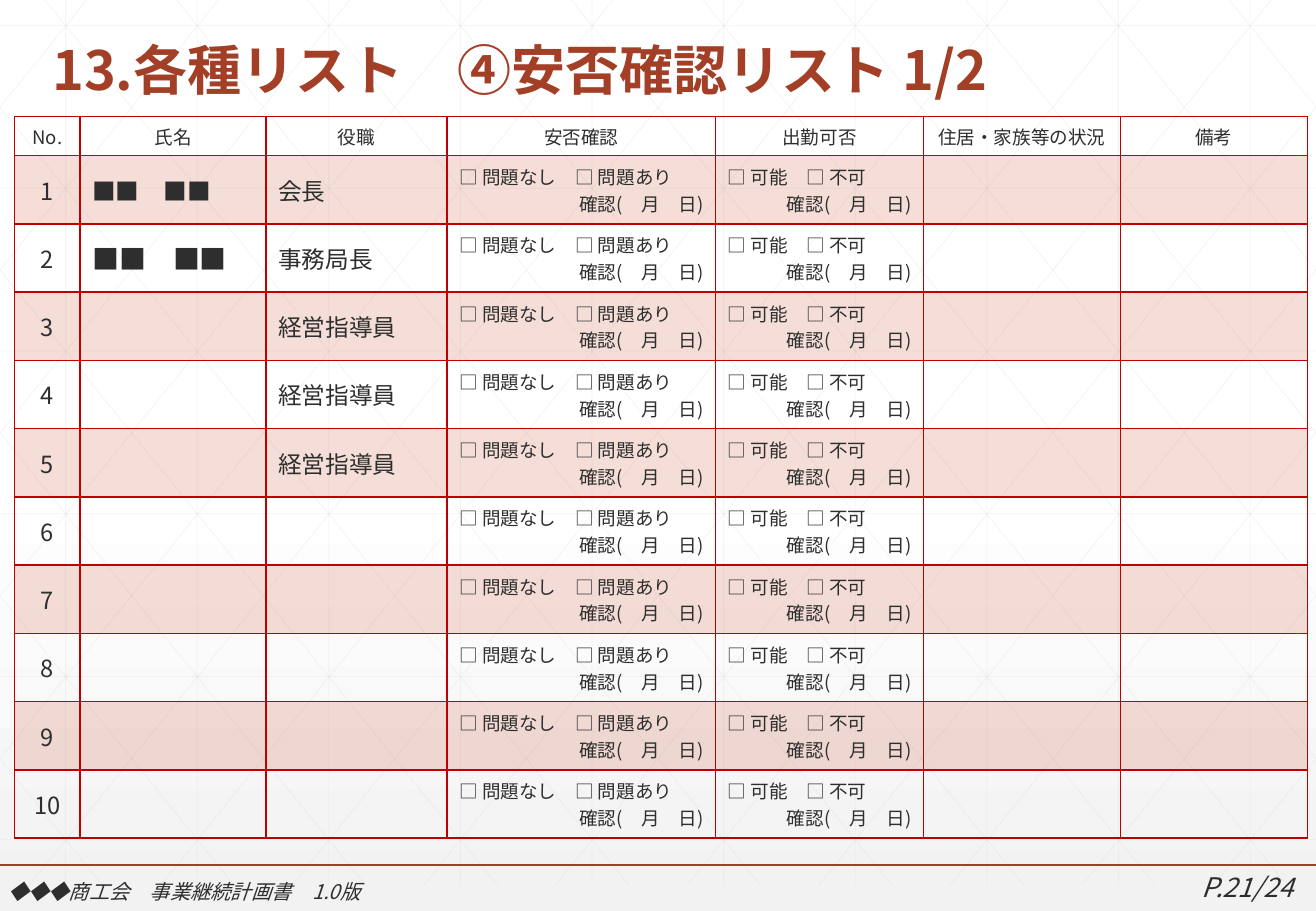
from dataclasses import dataclass

from lxml import etree
from pptx import Presentation
from pptx.dml.color import RGBColor
from pptx.enum.lang import MSO_LANGUAGE_ID
from pptx.enum.shapes import MSO_CONNECTOR
from pptx.enum.text import MSO_ANCHOR, MSO_AUTO_SIZE, PP_ALIGN
from pptx.oxml.ns import qn
from pptx.util import Inches, Pt

LEFT, CENTER, RIGHT = PP_ALIGN.LEFT, PP_ALIGN.CENTER, PP_ALIGN.RIGHT
MIDDLE, BOTTOM = MSO_ANCHOR.MIDDLE, MSO_ANCHOR.BOTTOM
STRAIGHT = MSO_CONNECTOR.STRAIGHT
NO_AUTOFIT = MSO_AUTO_SIZE.NONE
JAPANESE = MSO_LANGUAGE_ID.JAPANESE

FONT = "Noto Sans CJK JP"
COLORS = {
    "text": "2D2E2D",
    "accent": "A43F27",
    "border": "C00000",
    "band": "D15A3E",
    "grid": "D9D9D9",
    "white": "FFFFFF",
    "gray": "F2F2F2",
}
WIDTH, HEIGHT = 10.83, 7.5
GRID_TOP, GRID_BOTTOM = -0.21, 7.29
GRID_STEP, GRID_ROW_STEP = 1.083, 1.34
DIAGONAL_RUN = 6.06

HEADERS = ["No.", "氏名", "役職", "安否確認", "出勤可否", "住居・家族等の状況", "備考"]
COLUMN_WIDTHS = [0.54, 1.53, 1.49, 2.21, 1.71, 1.62, 1.54]
HEADER_HEIGHT, ROW_HEIGHT = 0.32, 0.562
ROW_COUNT = 10
SAFETY = "□ 問題なし　□ 問題あり"
ATTENDANCE = "□ 可能　□ 不可"
CONFIRMED = "確認(　月　日)"


@dataclass
class Member:
    name: str = ""
    role: str = ""
    name_size: float = 14


@dataclass
class Line:
    x1: float
    y1: float
    x2: float
    y2: float
    color: str = "grid"
    width: float = 0.5
    opacity: int = 25


@dataclass
class FooterBox:
    text: str
    left: float
    top: float
    width: float
    height: float
    size: float
    align: PP_ALIGN


MEMBERS = [
    Member("■■　■■", "会長"),
    Member("■■　■■", "事務局長", 16),
    *[Member(role="経営指導員") for _ in range(3)],
    *[Member() for _ in range(ROW_COUNT - 5)],
]
FOOTERS = [
    FooterBox("P.21/24", 9.17, 7.12, 1.57, 0.37, 16, RIGHT),
    FooterBox("◆◆◆商工会　事業継続計画書	1.0版", -0.03, 7.19, 5.27, 0.3, 12, LEFT),
]


def rgb(name: str) -> RGBColor:
    return RGBColor.from_string(COLORS[name])


def write(para, text: str, *, size: float = 11, color: str = "text",
          align: PP_ALIGN = LEFT, bold: bool = False, italic: bool = False) -> None:
    para.alignment = align
    span = para.add_run()
    span.text = text
    font = span.font
    font.size, font.bold, font.italic = Pt(size), bold, italic
    font.color.rgb = rgb(color)
    font.name = FONT
    font.language_id = JAPANESE
    etree.SubElement(span._r.get_or_add_rPr(), qn("a:ea"), typeface=FONT)


def set_opacity(element, percent: int) -> None:
    for color in element.iter(qn("a:srgbClr")):
        etree.SubElement(color, qn("a:alpha"), val=str(percent * 1000))


def draw_line(slide, line: Line) -> None:
    connector = slide.shapes.add_connector(
        STRAIGHT, Inches(line.x1), Inches(line.y1), Inches(line.x2), Inches(line.y2))
    connector.line.color.rgb = rgb(line.color)
    connector.line.width = Pt(line.width)
    properties = connector._element.spPr
    if line.opacity < 100:
        set_opacity(properties, line.opacity)
    etree.SubElement(properties, qn("a:effectLst"))


def grid_lines() -> list[Line]:
    lines = []
    for index in range(10):
        x = 0.54 + index * GRID_STEP
        lines.append(Line(x, GRID_TOP, x, GRID_BOTTOM))
    for index in range(6):
        y = 0.21 + index * GRID_ROW_STEP
        lines.append(Line(0, y, WIDTH, y))
    slope = (GRID_BOTTOM - GRID_TOP) / DIAGONAL_RUN
    for index in range(-5, 10):
        start = 0.2 + index * GRID_STEP
        x1, x2 = max(start, 0), min(start + DIAGONAL_RUN, WIDTH)
        y1, y2 = (GRID_TOP + (x - start) * slope for x in (x1, x2))
        lines.append(Line(x1, y1, x2, y2))
        lines.append(Line(WIDTH - x1, y1, WIDTH - x2, y2))
    return lines


def draw_background(slide) -> None:
    fill = slide.background.fill
    fill.gradient()
    fill.gradient_angle = 270
    for stop, position, color in zip(fill.gradient_stops, (0.53, 1), ("white", "gray")):
        stop.position = position
        stop.color.rgb = rgb(color)
    for line in grid_lines():
        draw_line(slide, line)
    draw_line(slide, Line(0, 7.12, WIDTH, 7.12, "accent", 1, 100))


def draw_footer(slide, footer: FooterBox) -> None:
    box = slide.shapes.add_textbox(
        Inches(footer.left), Inches(footer.top), Inches(footer.width), Inches(footer.height))
    box.text_frame.word_wrap = True
    write(box.text_frame.paragraphs[0], footer.text,
          size=footer.size, align=footer.align, italic=True)


def draw_title(slide, text: str) -> None:
    title = slide.shapes.title
    title.left, title.top = Inches(0.33), Inches(0.16)
    title.width, title.height = Inches(10.15), Inches(0.73)
    frame = title.text_frame
    frame.auto_size = NO_AUTOFIT
    frame.vertical_anchor = BOTTOM
    para = frame.paragraphs[0]
    para.line_spacing = 0.9
    write(para, text, size=32, color="accent", bold=True)
    title.element.getparent().append(title.element)


def format_cell(cell, banded: bool) -> None:
    cell.vertical_anchor = MIDDLE
    properties = cell._tc.get_or_add_tcPr()
    if banded:
        cell.fill.solid()
        cell.fill.fore_color.rgb = rgb("band")
        set_opacity(properties, 20)
    else:
        cell.fill.background()
    for index, side in enumerate(("lnL", "lnR", "lnT", "lnB")):
        border = etree.Element(qn(f"a:{side}"), w=str(Pt(1)))
        fill = etree.SubElement(border, qn("a:solidFill"))
        etree.SubElement(fill, qn("a:srgbClr"), val=COLORS["border"])
        properties.insert(index, border)


def draw_table(slide) -> None:
    table = slide.shapes.add_table(
        ROW_COUNT + 1, len(HEADERS), Inches(0.12), Inches(0.96),
        Inches(sum(COLUMN_WIDTHS)), Inches(HEADER_HEIGHT + ROW_COUNT * ROW_HEIGHT)).table
    table.first_row = table.horz_banding = False
    for column, width in zip(table.columns, COLUMN_WIDTHS):
        column.width = Inches(width)
    for index, row in enumerate(table.rows):
        row.height = Inches(ROW_HEIGHT if index else HEADER_HEIGHT)
        for cell in row.cells:
            format_cell(cell, index % 2 == 1)
    for column, header in enumerate(HEADERS):
        write(table.cell(0, column).text_frame.paragraphs[0], header, align=CENTER)
    for number, member in enumerate(MEMBERS, 1):
        frames = [table.cell(number, column).text_frame for column in range(5)]
        write(frames[0].paragraphs[0], str(number), size=14, align=CENTER)
        if member.name:
            write(frames[1].paragraphs[0], member.name, size=member.name_size)
        if member.role:
            write(frames[2].paragraphs[0], member.role, size=14)
        for frame, choices in zip(frames[3:], (SAFETY, ATTENDANCE)):
            write(frame.paragraphs[0], choices)
            write(frame.add_paragraph(), CONFIRMED, align=RIGHT)


def main() -> None:
    deck = Presentation()
    deck.slide_width, deck.slide_height = Inches(WIDTH), Inches(HEIGHT)
    slide = deck.slides.add_slide(deck.slide_layouts[5])
    draw_background(slide)
    for footer in FOOTERS:
        draw_footer(slide, footer)
    draw_title(slide, "13.各種リスト　④安否確認リスト 1/2")
    draw_table(slide)
    deck.save("out.pptx")


if __name__ == "__main__":
    main()
